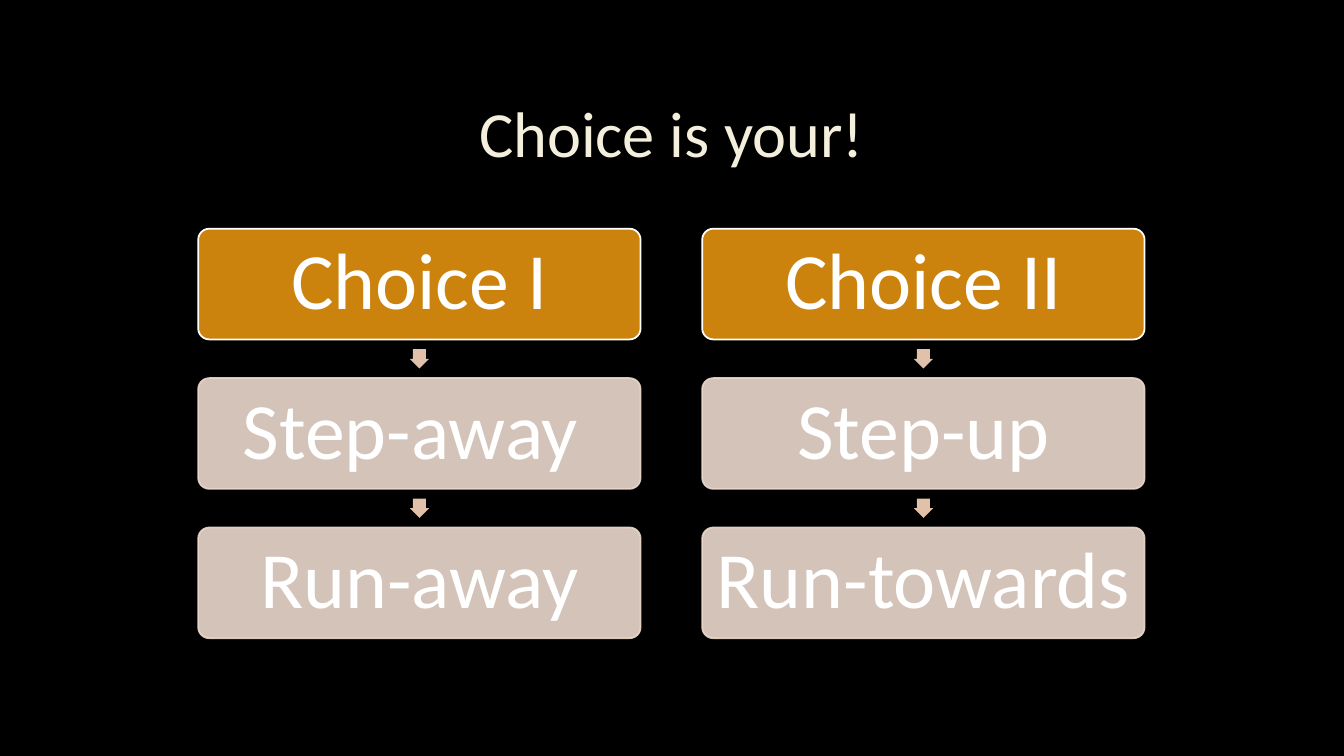
import dataclasses

import lxml.etree
import pptx
import pptx.dml.color
import pptx.enum.shapes
import pptx.enum.text
import pptx.oxml.ns
import pptx.util

Pt = pptx.util.Pt
SHAPE = pptx.enum.shapes.MSO_SHAPE


@dataclasses.dataclass(frozen=True)
class Theme:
    """Colours, font and type sizes of the slide."""
    back: str = "000000"
    cream: str = "F4EEDC"
    white: str = "FFFFFF"
    gold: str = "CC830E"
    pale: str = "ECD9CC"
    tan: str = "E2C1AB"
    font: str = "Calibri"
    title: int = 46
    label: int = 57


THEME = Theme()


def paint(fill, color, alpha=100):
    """Give a fill a solid colour with an opacity in percent."""
    fill.solid()
    fill.fore_color.rgb = pptx.dml.color.RGBColor.from_string(color)
    if alpha < 100:
        tag = pptx.oxml.ns.qn("a:srgbClr")
        node = next(fill._xPr.iter(tag))
        lxml.etree.SubElement(node, pptx.oxml.ns.qn("a:alpha"), val=str(alpha * 1000))


def write(shape, text, size, color, inset):
    """Put one centred line of text in a shape."""
    frame = shape.text_frame
    frame.word_wrap = True
    frame.vertical_anchor = pptx.enum.text.MSO_ANCHOR.MIDDLE
    frame.margin_left = frame.margin_right = Pt(inset)
    frame.margin_top = frame.margin_bottom = Pt(inset)
    para = frame.paragraphs[0]
    para.alignment = pptx.enum.text.PP_ALIGN.CENTER
    para.line_spacing = 0.9
    run = para.add_run()
    run.text = text
    run.font.size = Pt(size)
    run.font.name = THEME.font
    paint(run.font.fill, color)


def heading(slide, text, left, top, width, height):
    """Place the slide title in its box."""
    box = slide.shapes.add_textbox(Pt(left), Pt(top), Pt(width), Pt(height))
    write(box, text, size=THEME.title, color=THEME.cream, inset=4)


def card(slide, text, left, top, width, height, fill, edge, alpha):
    """Draw one rounded card with its label."""
    box = slide.shapes.add_shape(
        SHAPE.ROUNDED_RECTANGLE, Pt(left), Pt(top), Pt(width), Pt(height))
    box.adjustments[0] = 0.1
    box.shadow.inherit = False
    paint(box.fill, fill, alpha)
    paint(box.line.fill, edge, alpha)
    box.line.width = Pt(1.25)
    write(box, text, size=THEME.label, color=THEME.white, inset=6)


def arrow(slide, center, middle, size=13.8):
    """Draw a small down arrow around a point."""
    mark = slide.shapes.add_shape(
        SHAPE.DOWN_ARROW, Pt(center - size / 2), Pt(middle - size / 2), Pt(size), Pt(size))
    mark.adjustments[0] = 0.667
    mark.adjustments[1] = 0.5
    mark.shadow.inherit = False
    paint(mark.fill, THEME.tan)
    mark.line.fill.background()


def column(slide, labels, left, top, width, height, gap=27.6):
    """Stack a head card and its steps, joined by arrows, in a box."""
    tall = (height - gap * (len(labels) - 1)) / len(labels)
    for row, text in enumerate(labels):
        y = top + row * (tall + gap)
        if row:
            arrow(slide, left + width / 2, y - gap / 2)
            look = dict(fill=THEME.pale, edge=THEME.pale, alpha=90)
        else:
            look = dict(fill=THEME.gold, edge=THEME.white, alpha=100)
        card(slide, text, left, y, width, tall, **look)


def main():
    """Build the slide and save it."""
    deck = pptx.Presentation()
    deck.slide_width, deck.slide_height = Pt(960), Pt(540)
    slide = deck.slides.add_slide(deck.slide_layouts[6])
    paint(slide.background.fill, THEME.back)
    heading(slide, "Choice is your!", 72, 48, 815, 99.4)
    paths = [
        ["Choice I", "Step-away ", "Run-away"],
        ["Choice II", "Step-up", "Run-towards"],
    ]
    for col, labels in enumerate(paths):
        column(slide, labels, 141.6 + col * 360, 163.4, 316, 292.5)
    deck.save("out.pptx")


if __name__ == "__main__":
    main()
